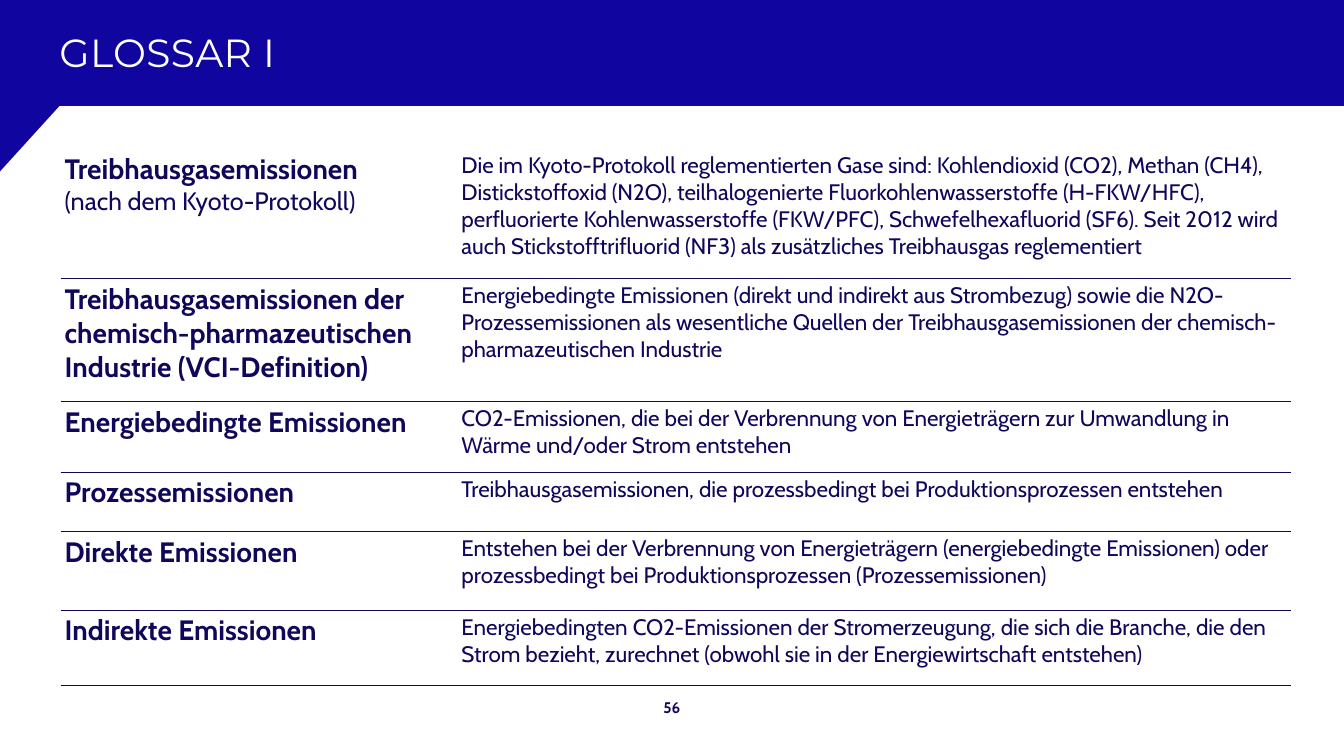
from lxml.etree import SubElement
from pptx import Presentation
from pptx.dml.color import RGBColor
from pptx.enum.text import MSO_ANCHOR, PP_ALIGN
from pptx.oxml.ns import qn
from pptx.util import Cm, Pt

BAND_BLUE = RGBColor(0x10, 0x06, 0x9F)
INK = RGBColor(0x10, 0x06, 0x5A)
WHITE = RGBColor(0xFF, 0xFF, 0xFF)

COLUMN_WIDTHS = (10, 21)
INSET = Cm(0.1)

# Term, optional remark, definition, row height in cm
GLOSSARY = [
    ("Treibhausgasemissionen", "(nach dem Kyoto-Protokoll)",
     "Die im Kyoto-Protokoll reglementierten Gase sind: Kohlendioxid (CO2), Methan (CH4), "
     "Distickstoffoxid (N2O), teilhalogenierte Fluorkohlenwasserstoffe (H-FKW/HFC), "
     "perfluorierte Kohlenwasserstoffe (FKW/PFC), Schwefelhexafluorid (SF6). Seit 2012 wird "
     "auch Stickstofftrifluorid (NF3) als zusätzliches Treibhausgas reglementiert", 3.28),
    ("Treibhausgasemissionen der chemisch-pharmazeutischen Industrie (VCI-Definition)", None,
     "Energiebedingte Emissionen (direkt und indirekt aus Strombezug) sowie die "
     "N2O-Prozessemissionen als wesentliche Quellen der Treibhausgasemissionen der "
     "chemisch-pharmazeutischen Industrie", 3.1),
    ("Energiebedingte Emissionen", None,
     "CO2-Emissionen, die bei der Verbrennung von Energieträgern zur Umwandlung in "
     "Wärme und/oder Strom entstehen", 1.78),
    ("Prozessemissionen", None,
     "Treibhausgasemissionen, die prozessbedingt bei Produktionsprozessen entstehen", 1.5),
    ("Direkte Emissionen", None,
     "Entstehen bei der Verbrennung von Energieträgern (energiebedingte Emissionen) oder "
     "prozessbedingt bei Produktionsprozessen (Prozessemissionen)", 1.98),
    ("Indirekte Emissionen", None,
     "Energiebedingten CO2-Emissionen der Stromerzeugung, die sich die Branche, die den "
     "Strom bezieht, zurechnet (obwohl sie in der Energiewirtschaft entstehen)", 1.9),
]


def write(paragraph, text, size, color=INK, bold=False, face="Cabin"):
    run = paragraph.add_run()
    run.text = text
    font = paragraph.font
    font.name, font.size, font.bold = face, Pt(size), bold
    font.color.rgb = color
    return run


def add_label(slide, left, top, width, height, inset=0):
    frame = slide.shapes.add_textbox(left, top, width, height).text_frame
    frame.word_wrap = True
    frame.vertical_anchor = MSO_ANCHOR.MIDDLE
    frame.margin_left = frame.margin_right = 0
    frame.margin_top = frame.margin_bottom = inset
    return frame.paragraphs[0]


def add_header(slide, left, top, width, height):
    # Band with a slanted tail at the lower left
    notch, tail = Cm(1.5), Cm(1.65)
    right, bottom = left + width, top + height
    outline = slide.shapes.build_freeform(left, top)
    outline.add_line_segments([(right, top), (right, bottom),
                               (left + notch, bottom), (left, bottom + tail)])
    band = outline.convert_to_shape()
    band.shadow.inherit = False
    band.fill.solid()
    band.fill.fore_color.rgb = BAND_BLUE
    band.line.fill.background()

    # Title
    title = add_label(slide, left + notch, top + Cm(0.05), width - Cm(2.88), Cm(2.49), INSET)
    run = write(title, "GLOSSAR I", 28, WHITE, face="Montserrat")
    run.font._element.set("spc", "30") if hasattr(run.font, "_element") else \
        run._r.get_or_add_rPr().set("spc", "30")


def set_borders(cell, top, bottom):
    """Rule the cell above and below with widths in points, 0 meaning no line."""
    properties = cell._tc.get_or_add_tcPr()
    for side, points in (("L", 0), ("R", 0), ("T", top), ("B", bottom)):
        border = SubElement(properties, qn(f"a:ln{side}"), w=str(Pt(points)))
        if points:
            fill = SubElement(border, qn("a:solidFill"))
            SubElement(fill, qn("a:srgbClr"), val=str(INK))
        else:
            SubElement(border, qn("a:noFill"))


def add_glossary(slide, left, top, width, height):
    table = slide.shapes.add_table(len(GLOSSARY), 2, left, top, width, height).table
    table.first_row = table.horz_banding = False
    for column, column_width in zip(table.columns, COLUMN_WIDTHS):
        column.width = Cm(column_width)

    last = len(GLOSSARY) - 1
    for index, (term, remark, definition, row_height) in enumerate(GLOSSARY):
        row = table.rows[index]
        row.height = Cm(row_height)
        for cell in row.cells:
            cell.margin_left = cell.margin_right = INSET
            cell.margin_top = cell.margin_bottom = INSET
            set_borders(cell, 0.59 if index else 0, 1.18 if index == last else 0.59)
            cell.fill.background()

        term_frame, definition_frame = (cell.text_frame for cell in row.cells)
        write(term_frame.paragraphs[0], term, 20, bold=True)
        if remark:
            write(term_frame.add_paragraph(), remark, 18)
        write(definition_frame.paragraphs[0], definition, 16)


def add_page_number(slide, left, top, width, height):
    number = add_label(slide, left, top, width, height)
    number.alignment = PP_ALIGN.CENTER
    write(number, "56", 11, bold=True)


def main():
    presentation = Presentation()
    presentation.slide_width, presentation.slide_height = Cm(33.87), Cm(19.05)
    slide = presentation.slides.add_slide(presentation.slide_layouts[6])

    add_header(slide, 0, 0, presentation.slide_width, Cm(2.67))
    table_height = sum(row_height for *_, row_height in GLOSSARY)
    add_glossary(slide, Cm(1.53), Cm(3.73), Cm(sum(COLUMN_WIDTHS)), Cm(table_height))
    add_page_number(slide, Cm(16.18), Cm(17.48), Cm(1.5), Cm(0.71))
    presentation.save("out.pptx")


if __name__ == "__main__":
    main()
